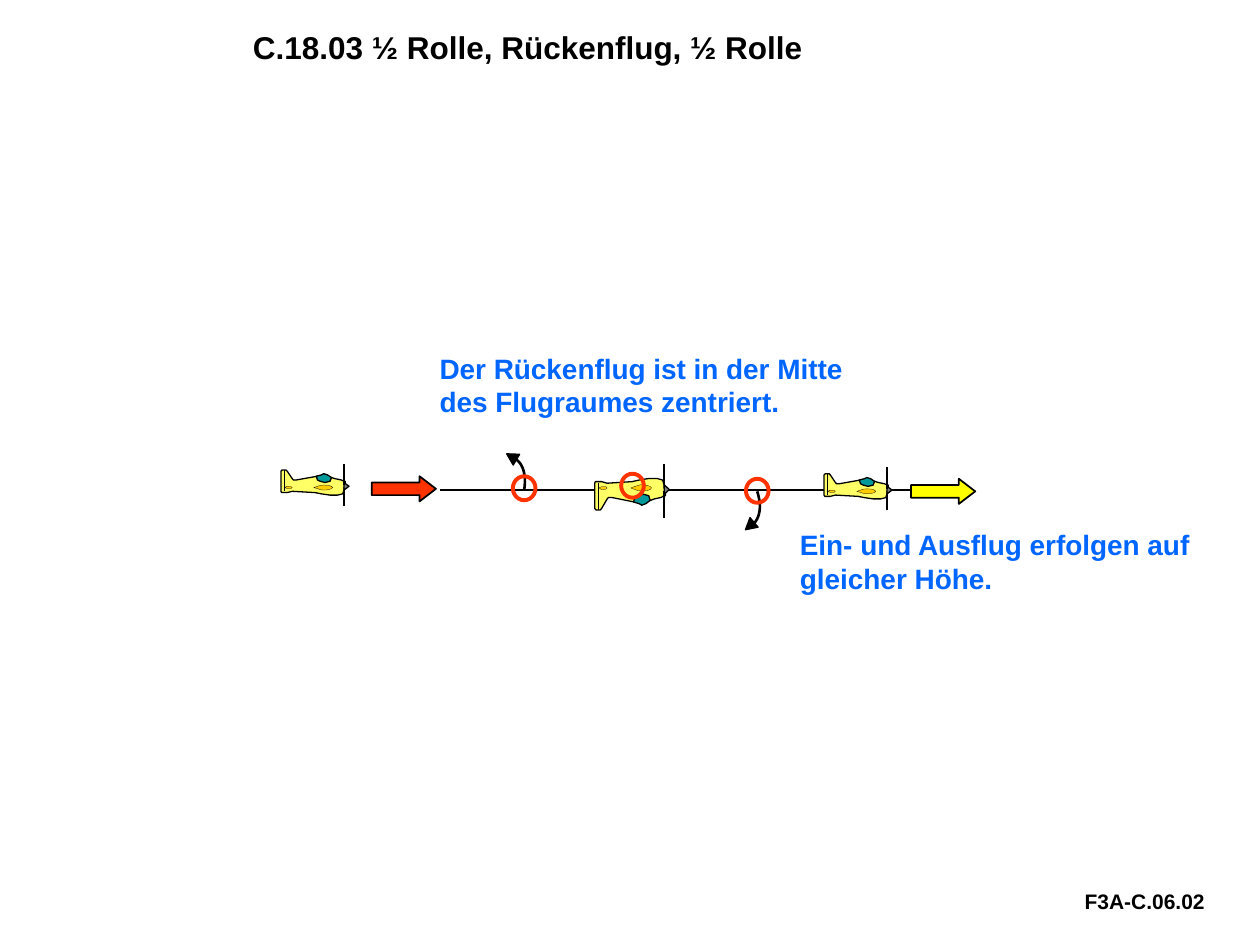
from lxml.etree import SubElement
from pptx import Presentation
from pptx.dml.color import RGBColor
from pptx.enum.shapes import MSO_CONNECTOR, MSO_SHAPE
from pptx.oxml.ns import qn
from pptx.util import Inches, Pt

COLORS = {
    "black": "000000",
    "blue": "0066FF",
    "red": "FF3300",
    "yellow": "FFFF00",
    "body": "FFFF66",
    "canopy": "009999",
    "wing": "FFCC00",
    "nose": "808080",
}

# Aircraft outlines in hundredths of an inch, from the tail on the body axis
BODY = [(40, -5), (43, -4), (48, -3), (50, -2), (51, -2), (51, 2), (50, 3),
        (50, 5), (49, 8), (45, 9), (39, 9), (32, 8), (27, 7), (9, 6), (5, 7),
        (0.5, 7), (0, 6), (0, -10), (1, -11), (4, -11), (5, -10), (9, -4),
        (10, -3), (12, -3), (29, -6), (30, -3), (35, -2), (38, -2), (39, -3)]
CANOPY = [(28, -6), (29, -3), (31, -2), (35, -1), (39, -2), (40, -5),
          (37, -7), (34, -8), (32, -7)]
WING = [(26, 3), (31, 1.3), (34, 1), (38, 1.3), (40, 2), (41, 3), (40, 4),
        (37, 4.8), (33, 5), (31, 4.5)]
TAILPLANE = [(3, 3), (5, 3.8), (8, 3.8), (9, 3), (8, 2.2), (5, 2)]


def rgb(name):
    return RGBColor.from_string(COLORS[name])


def style(sp, fill, line, width):
    sp.shadow.inherit = False
    if fill:
        sp.fill.solid()
        sp.fill.fore_color.rgb = rgb(fill)
    else:
        sp.fill.background()
    sp.line.color.rgb = rgb(line)
    sp.line.width = Pt(width)


def add_text(shapes, box, text, size, color, wrap=True):
    tf = shapes.add_textbox(*map(Inches, box)).text_frame
    tf.word_wrap = wrap
    r = tf.paragraphs[0].add_run()
    r.text = text
    r.font.name = "Arial"
    r.font.size = Pt(size)
    r.font.bold = True
    r.font.color.rgb = rgb(color)


def add_preset(shapes, kind, box, fill, line="black", width=0.75, rotation=0):
    sp = shapes.add_shape(kind, *map(Inches, box))
    style(sp, fill, line, width)
    sp.rotation = rotation
    return sp


def add_line(shapes, start, end):
    c = shapes.add_connector(MSO_CONNECTOR.STRAIGHT,
                             *map(Inches, (*start, *end)))
    c.line.color.rgb = rgb("black")
    c.line.width = Pt(0.75)
    SubElement(c._element.spPr, qn("a:effectLst"))


def add_outline(shapes, points, fill, width, close=True):
    pts = [(Inches(x), Inches(y)) for x, y in points]
    fb = shapes.build_freeform(*pts[0])
    fb.add_line_segments(pts[1:], close=close)
    style(fb.convert_to_shape(), fill, "black", width)


def add_plane(slide, x, y, sx=1, sy=1):
    """Draw an aircraft flying right; a negative sy turns it inverted."""
    shapes = slide.shapes.add_group_shape().shapes

    def at(point):
        return x + sx * point[0] / 100, y + sy * point[1] / 100

    add_line(shapes, at((50, 18)), at((50, 2)))
    for points, fill, width in ((BODY, "body", 0.75),
                                (CANOPY, "canopy", 0.75),
                                (WING, "wing", 0.13),
                                (TAILPLANE, "wing", 0.13)):
        add_outline(shapes, [at(p) for p in points], fill, width)
    add_line(shapes, at((3, 6)), at((3, -11)))
    cx, cy = at((52, 2))
    w, h = 0.06 * abs(sy), 0.04
    add_preset(shapes, MSO_SHAPE.ISOSCELES_TRIANGLE,
               (cx - w / 2, cy - h / 2, w, h), "nose", rotation=90)
    add_line(shapes, at((50, 1)), at((50, -16)))


def add_roll_arrow(shapes, curve, head, rotation):
    """Draw a curved arrow along a cubic Bézier curve."""
    steps = 12
    points = []
    for i in range(steps + 1):
        t = i / steps
        weights = ((1 - t) ** 3, 3 * t * (1 - t) ** 2,
                   3 * t ** 2 * (1 - t), t ** 3)
        points.append([sum(w * p[k] for w, p in zip(weights, curve))
                       for k in (0, 1)])
    add_outline(shapes, points, None, 1.5, close=False)
    add_preset(shapes, MSO_SHAPE.ISOSCELES_TRIANGLE, (*head, 0.1, 0.09),
               "black", rotation=rotation)


def add_block_arrow(shapes, x, y, fill):
    sp = add_preset(shapes, MSO_SHAPE.RIGHT_ARROW, (x, y, 0.51, 0.2), fill,
                    width=1)
    sp.adjustments[1] = 0.65


def main():
    prs = Presentation()
    prs.slide_width, prs.slide_height = Inches(10), Inches(7.5)
    slide = prs.slides.add_slide(prs.slide_layouts[6])
    shapes = slide.shapes

    # Title, code and notes
    add_text(shapes, (1.91, 0.17, 6.54, 0.39),
             "C.18.03 ½ Rolle, Rückenflug, ½ Rolle", 18, "black")
    add_text(shapes, (8.51, 7, 1.32, 0.3), "F3A-C.06.02", 12, "black",
             wrap=False)
    add_text(shapes, (6.25, 4.14, 3.35, 0.64),
             "Ein- und Ausflug erfolgen auf gleicher Höhe.", 16, "blue")
    add_text(shapes, (3.39, 2.74, 3.56, 0.64),
             "Der Rückenflug ist in der Mitte des Flugraumes zentriert.",
             16, "blue")

    # Entry, flight path and first half roll
    add_block_arrow(shapes, 2.95, 3.78, "red")
    add_plane(slide, 2.23, 3.84)
    add_line(shapes, (7.31, 3.89), (3.49, 3.89))
    add_roll_arrow(shapes,
                   [(4.16, 3.89), (4.18, 3.77), (4.15, 3.68), (4.09, 3.64)],
                   (4.01, 3.58), 301.1)

    # Inverted flight and second half roll
    add_plane(slide, 4.72, 3.91, 1.1, -1.25)
    add_roll_arrow(shapes,
                   [(6.01, 3.9), (6.05, 4.02), (6.03, 4.11), (5.98, 4.16)],
                   (5.9, 4.13), 229.8)

    # Exit
    add_plane(slide, 6.54, 3.87)
    add_block_arrow(shapes, 7.23, 3.8, "yellow")

    # Position rings
    for x, y in ((5.92, 3.8), (4.93, 3.76), (4.07, 3.78)):
        add_preset(shapes, MSO_SHAPE.OVAL, (x, y, 0.18, 0.19), None, "red",
                   2.25)

    prs.save("out.pptx")


if __name__ == "__main__":
    main()
